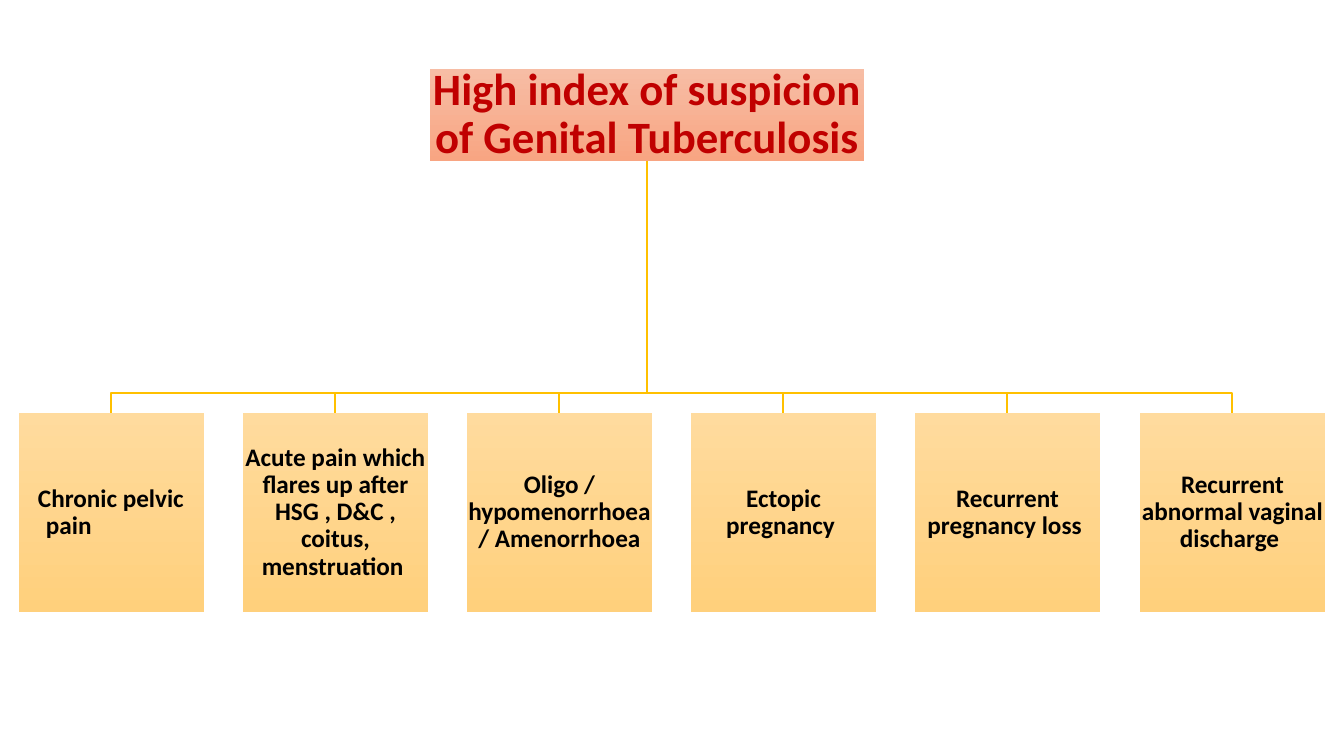
from pptx import Presentation
from pptx.dml.color import RGBColor
from pptx.enum.shapes import MSO_SHAPE
from pptx.enum.text import MSO_ANCHOR, MSO_AUTO_SIZE, PP_ALIGN
from pptx.util import Pt

EMU_PER_PX = 914400 / 100.8
COLORS = {
    "root_top": "F7BDA5", "root_bottom": "F8A582", "root_text": "C00000",
    "leaf_top": "FFDB9E", "leaf_bottom": "FFD07C", "leaf_text": "000000",
    "branch": "FFC000",
}
ROOT = (430, 69, 434, 92)
LEAF_LEFT, LEAF_TOP, LEAF_WIDTH, LEAF_HEIGHT = 19, 413, 185, 199
LEAF_SPAN = 1121
BRANCH_LEVEL = 393
SYMPTOMS = [
    "Chronic pelvic pain",
    "Acute pain which flares up after HSG , D&C , coitus, menstruation ",
    "Oligo / hypomenorrhoea / Amenorrhoea",
    "Ectopic pregnancy ",
    "Recurrent pregnancy loss ",
    "Recurrent abnormal vaginal discharge ",
]


def emu(px):
    return round(px * EMU_PER_PX)


def color(name):
    return RGBColor.from_string(COLORS[name])


def apply(target, values):
    for name, value in values.items():
        setattr(target, name, value)


class TreeSlide:
    """Draws a tree of titled boxes on one slide in a shared style."""

    def __init__(self, deck):
        self.page = deck.slides.add_slide(deck.slide_layouts[5])
        self.font = {"name": "Calibri", "bold": True}

    def style(self, box, kind, text, size, inset):
        box.fill.gradient()
        box.fill.gradient_angle = 270
        for stop, end in zip(box.fill.gradient_stops, ("top", "bottom")):
            stop.color.rgb = color(f"{kind}_{end}")
        box.line.fill.background()
        frame = box.text_frame
        apply(frame, {"word_wrap": True, "auto_size": MSO_AUTO_SIZE.NONE,
                      "vertical_anchor": MSO_ANCHOR.MIDDLE})
        apply(frame, {f"margin_{side}": emu(inset)
                      for side in ("left", "top", "right", "bottom")})
        para = frame.paragraphs[0]
        apply(para, {"alignment": PP_ALIGN.CENTER, "line_spacing": 0.9})
        span = para.add_run()
        span.text = text
        apply(span.font, {**self.font, "size": Pt(size)})
        span.font.color.rgb = color(f"{kind}_text")
        return para

    def title(self, text, area):
        box = self.page.shapes.title
        apply(box, dict(zip(("left", "top", "width", "height"), map(emu, area))))
        self.style(box, "root", text, 32, 2)

    def leaf(self, text, area):
        box = self.page.shapes.add_shape(MSO_SHAPE.RECTANGLE, *map(emu, area))
        box.shadow.inherit = False
        return self.style(box, "leaf", text, 18, 1)

    def branch(self, points):
        builder = self.page.shapes.build_freeform(*points[0], scale=EMU_PER_PX)
        builder.add_line_segments(points[1:], close=False)
        line = builder.convert_to_shape()
        line.shadow.inherit = False
        line.fill.background()
        line.line.color.rgb = color("branch")
        line.line.width = Pt(1)

    def hang(self, para, margin, indent):
        para.alignment = PP_ALIGN.LEFT
        properties = para._p.get_or_add_pPr()
        properties.set("marL", str(emu(margin)))
        properties.set("indent", str(emu(indent)))


def main():
    deck = Presentation()
    apply(deck, {"slide_width": emu(1344), "slide_height": emu(756)})
    tree = TreeSlide(deck)
    tree.title("High index of suspicion of Genital Tuberculosis", ROOT)

    left, top, width, height = ROOT
    trunk, trunk_top = left + width // 2, top + height
    lefts = [LEAF_LEFT + LEAF_SPAN * index // (len(SYMPTOMS) - 1)
             for index in range(len(SYMPTOMS))]
    for leaf_left in reversed(lefts):
        middle = leaf_left + LEAF_WIDTH // 2
        tree.branch([(trunk, trunk_top), (trunk, BRANCH_LEVEL),
                     (middle, BRANCH_LEVEL), (middle, LEAF_TOP)])
    paras = [tree.leaf(text, (leaf_left, LEAF_TOP, LEAF_WIDTH, LEAF_HEIGHT))
             for text, leaf_left in zip(SYMPTOMS, lefts)]
    tree.hang(paras[0], 26, -8)
    deck.save("out.pptx")


if __name__ == "__main__":
    main()
